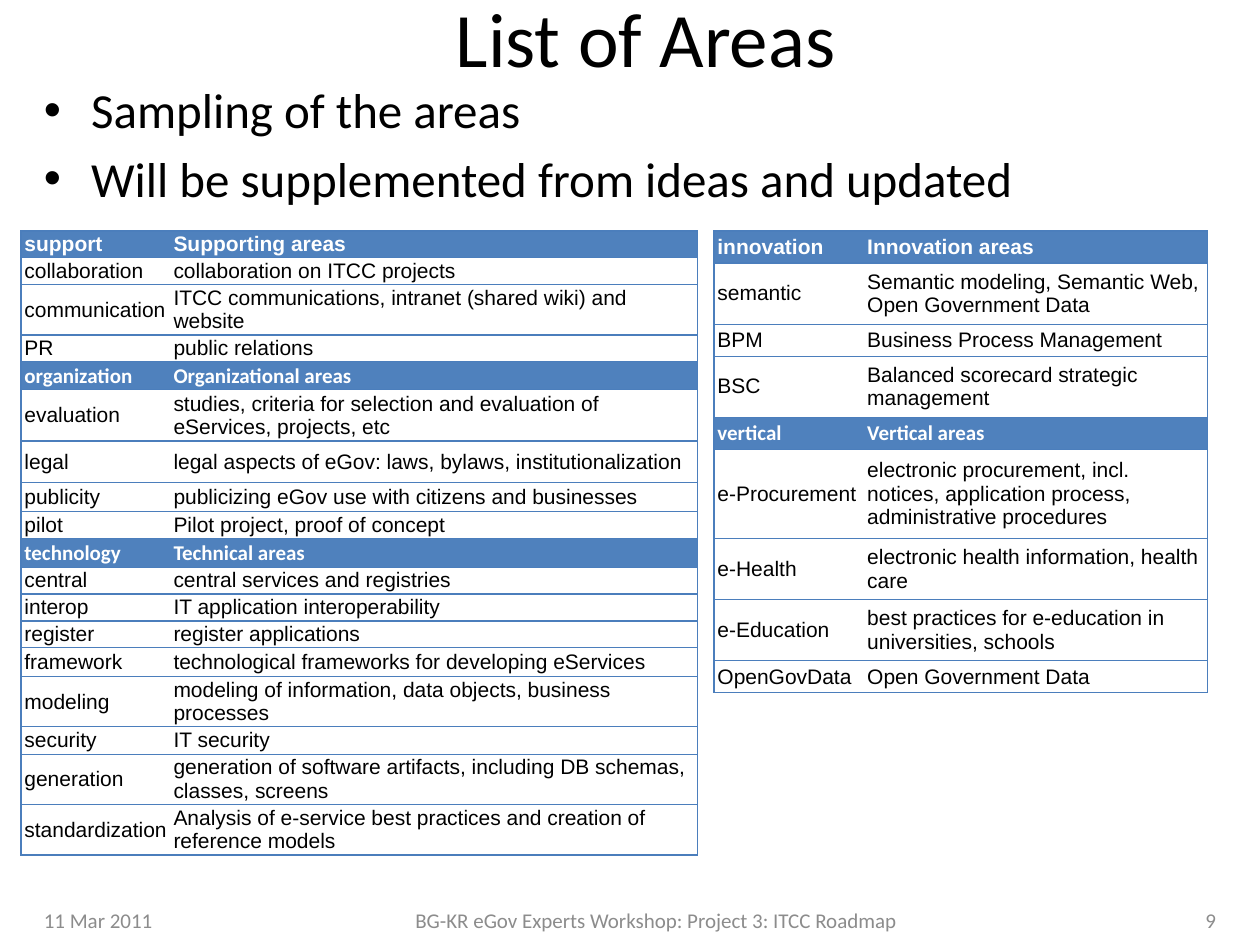
from lxml import etree
from pptx import Presentation
from pptx.dml.color import RGBColor
from pptx.enum.text import MSO_ANCHOR, PP_ALIGN
from pptx.oxml.ns import qn
from pptx.util import Pt

LEFT, CENTER, RIGHT = PP_ALIGN.LEFT, PP_ALIGN.CENTER, PP_ALIGN.RIGHT
TOP, MIDDLE = MSO_ANCHOR.TOP, MSO_ANCHOR.MIDDLE
COLORS = {"text": "000000", "header_text": "FFFFFF", "footer": "8C8C8C",
          "header_fill": "4F81BD", "border": "4B7EBC"}


def set_font(paragraph, size, color, name="Calibri", bold=False):
    values = {"size": Pt(size), "name": name, "bold": bold}
    for attribute, value in values.items():
        setattr(paragraph.font, attribute, value)
    paragraph.font.color.rgb = RGBColor.from_string(COLORS[color])


def add_border(cell, side, visible):
    line = etree.SubElement(cell._tc.get_or_add_tcPr(), qn(f"a:{side}"), w=str(Pt(0.75)))
    if visible:
        fill = etree.SubElement(line, qn("a:solidFill"))
        etree.SubElement(fill, qn("a:srgbClr"), val=COLORS["border"])
    else:
        etree.SubElement(line, qn("a:noFill"))


presentation = Presentation()
presentation.slide_width = Pt(720)
presentation.slide_height = Pt(540)
slide = presentation.slides.add_slide(presentation.slide_layouts[6])

text_boxes = [
    (72, 0, 594, 42, ["List of Areas"], 44, "text", CENTER, MIDDLE, False),
    (18, 42, 684, 84, ["Sampling of the areas", "Will be supplemented from ideas and updated"],
     28, "text", LEFT, TOP, True),
    (18, 511.2, 144, 28.8, ["11 Mar 2011"], 12, "footer", LEFT, MIDDLE, False),
    (162, 511.2, 426, 28.8, ["BG-KR eGov Experts Workshop: Project 3: ITCC Roadmap"],
     12, "footer", CENTER, MIDDLE, False),
    (588, 511.2, 114, 28.8, ["9"], 12, "footer", RIGHT, MIDDLE, False),
]
for left, top, width, height, lines, size, color, alignment, anchor, bulleted in text_boxes:
    shape = slide.shapes.add_textbox(Pt(left), Pt(top), Pt(width), Pt(height))
    text_frame = shape.text_frame
    text_frame.word_wrap = True
    text_frame.vertical_anchor = anchor
    text_frame.text = "\n".join(lines)
    for index, paragraph in enumerate(text_frame.paragraphs):
        paragraph.alignment = alignment
        if bulleted:
            properties = paragraph._p.get_or_add_pPr()
            properties.set("marL", str(Pt(27)))
            properties.set("indent", str(Pt(-27)))
            etree.SubElement(properties, qn("a:buFont"), typeface="Arial")
            etree.SubElement(properties, qn("a:buChar"), char="•")
            if index:
                paragraph.space_before = Pt(5.6)
        set_font(paragraph, size, color)

main_areas = [
    (15.2, "support", "Supporting areas"),
    (15.4, "collaboration", "collaboration on ITCC projects"),
    (28.8, "communication", "ITCC communications, intranet (shared wiki) and website"),
    (15.4, "PR", "public relations"),
    (16, "organization", "Organizational areas"),
    (29.2, "evaluation", "studies, criteria for selection and evaluation of eServices, projects, etc"),
    (23.7, "legal", "legal aspects of eGov: laws, bylaws, institutionalization"),
    (16.5, "publicity", "publicizing eGov use with citizens and businesses"),
    (15.7, "pilot", "Pilot project, proof of concept"),
    (16.2, "technology", "Technical areas"),
    (15.4, "central", "central services and registries"),
    (15.4, "interop", "IT application interoperability"),
    (15.2, "register", "register applications"),
    (16.5, "framework", "technological frameworks for developing eServices"),
    (28.7, "modeling", "modeling of information, data objects, business processes"),
    (15.6, "security", "IT security"),
    (28.7, "generation", "generation of software artifacts, including DB schemas, classes, screens"),
    (28.8, "standardization", "Analysis of e-service best practices and creation of reference models"),
]
other_areas = [
    (18.3, "innovation", "Innovation areas"),
    (34.9, "semantic", "Semantic modeling, Semantic Web, Open Government Data"),
    (18.3, "BPM", "Business Process Management"),
    (34.9, "BSC", "Balanced scorecard strategic management"),
    (18.3, "vertical", "Vertical areas"),
    (51.1, "e-Procurement", "electronic procurement, incl. notices, application process, administrative procedures"),
    (34.9, "e-Health", "electronic health information, health care"),
    (34.9, "e-Education", "best practices for e-education in universities, schools"),
    (18.3, "OpenGovData", "Open Government Data"),
]
tables = [(12, (85.2, 301.6), main_areas, (0, 4, 9)),
          (408, (85.6, 196.6), other_areas, (0, 4))]
cell_format = {"margin_left": Pt(2), "margin_right": Pt(0.5), "margin_top": Pt(0),
               "margin_bottom": Pt(0), "vertical_anchor": MIDDLE}

for left, widths, areas, header_rows in tables:
    total_height = sum(height for height, *_ in areas)
    table = slide.shapes.add_table(len(areas), 2, Pt(left), Pt(132),
                                   Pt(sum(widths)), Pt(total_height)).table
    table.first_row = False
    table.horz_banding = False
    for column, width in zip(table.columns, widths):
        column.width = Pt(width)
    for row_index, (height, *texts) in enumerate(areas):
        table.rows[row_index].height = Pt(height)
        is_header = row_index in header_rows
        for column_index, text in enumerate(texts):
            cell = table.cell(row_index, column_index)
            for attribute, value in cell_format.items():
                setattr(cell, attribute, value)
            for side, visible in (("lnL", column_index == 0), ("lnR", column_index == 1),
                                  ("lnT", True), ("lnB", True)):
                add_border(cell, side, visible)
            if is_header:
                cell.fill.solid()
                cell.fill.fore_color.rgb = RGBColor.from_string(COLORS["header_fill"])
            else:
                cell.fill.background()
            cell.text = text
            set_font(cell.text_frame.paragraphs[0], 12,
                     "header_text" if is_header else "text",
                     "Calibri" if is_header and row_index else "Arial", is_header)

presentation.save("out.pptx")
